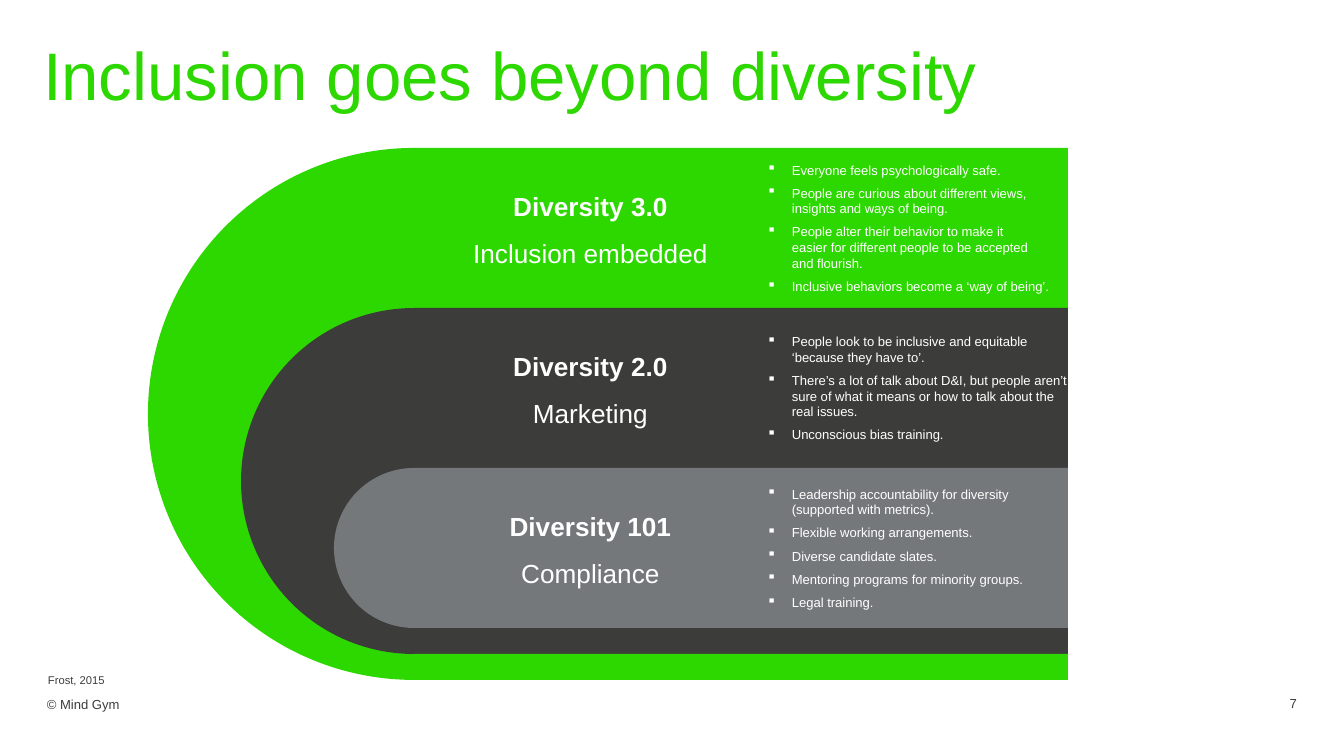
"""Build the slide on the three stages from diversity to inclusion."""
import pptx
import pptx.dml.color
import pptx.enum.shapes
import pptx.enum.text
import pptx.oxml.ns
import pptx.util
from lxml import etree

GREEN = pptx.dml.color.RGBColor(0x2D, 0xD7, 0x00)
CHARCOAL = pptx.dml.color.RGBColor(0x3C, 0x3C, 0x3B)
GREY = pptx.dml.color.RGBColor(0x75, 0x78, 0x7B)
WHITE = pptx.dml.color.RGBColor(0xFF, 0xFF, 0xFF)

Shape = pptx.enum.shapes.MSO_SHAPE
Align = pptx.enum.text.PP_ALIGN
Anchor = pptx.enum.text.MSO_ANCHOR

SLIDE_WIDTH, SLIDE_HEIGHT = 1344, 756
EMU_PER_PX = 9144000 / SLIDE_WIDTH

AXIS_X, TOP = 414, 148
COLUMN, ROW = 327, 160
OUTER_DIAMETER, DIAMETER_STEP = 532, 186
INSET, INDENT = 26, 25

STAGES = [
    (GREEN, "Diversity 3.0", "Inclusion embedded", [
        "Everyone feels psychologically safe.",
        "People are curious about different views, insights and ways of being.",
        "People alter their behavior to make it \neasier for different people "
        "to be accepted \nand flourish.",
        "Inclusive behaviors become a ‘way of being’.",
    ]),
    (CHARCOAL, "Diversity 2.0", "Marketing", [
        "People look to be inclusive and equitable ‘because they have to’.",
        "There’s a lot of talk about D&I, but people aren’t sure of what it means "
        "or how to talk about the real issues.",
        "Unconscious bias training.",
    ]),
    (GREY, "Diversity 101", "Compliance", [
        "Leadership accountability for diversity (supported with metrics).",
        "Flexible working arrangements.",
        "Diverse candidate slates.",
        "Mentoring programs for minority groups.",
        "Legal training.",
    ]),
]


def px(*lengths):
    return [pptx.util.Emu(round(length * EMU_PER_PX)) for length in lengths]


def add_bullet(paragraph):
    paragraph.level = 1
    properties = paragraph._p.get_or_add_pPr()
    margin, = px(INDENT)
    properties.set("marL", str(margin))
    properties.set("indent", str(-margin))
    bullet = etree.SubElement(properties, pptx.oxml.ns.qn("a:buChar"))
    bullet.set("char", "▪")


def write(holder, lines, size, color, align=Align.LEFT, anchor=Anchor.TOP, insets=(0, 0),
          spacing=None, after=0, bullets=False, bold_first=False):
    frame = holder.text_frame
    frame.word_wrap = True
    frame.auto_size = pptx.enum.text.MSO_AUTO_SIZE.NONE
    frame.vertical_anchor = anchor
    frame.margin_left, frame.margin_top = px(*insets)
    frame.margin_right = frame.margin_bottom = 0
    for index, line in enumerate(lines):
        paragraph = frame.paragraphs[0] if index == 0 else frame.add_paragraph()
        paragraph.text = line
        if bullets:
            add_bullet(paragraph)
        paragraph.alignment = align
        paragraph.line_spacing = spacing
        paragraph.space_after = pptx.util.Pt(after)
        for run in paragraph.runs:
            run.font.name = "Arial"
            run.font.size = pptx.util.Pt(size)
            run.font.color.rgb = color
            run.font.bold = bold_first and index == 0


def add_block(slide, kind, box, color):
    block = slide.shapes.add_shape(kind, *px(*box))
    block.shadow.inherit = False
    block.fill.solid()
    block.fill.fore_color.rgb = color
    block.line.fill.background()
    return block


def add_half_disc(slide, top, diameter, color):
    box = (AXIS_X - diameter // 2, top, diameter, diameter)
    disc = add_block(slide, Shape.PIE, box, color)
    disc.adjustments[0] = 54
    disc.adjustments[1] = 162


def add_stage(slide, top, color, name, focus, points):
    heading = add_block(slide, Shape.RECTANGLE, (AXIS_X, top, COLUMN, ROW), color)
    write(heading, [name, focus], 14, WHITE, align=Align.CENTER, anchor=Anchor.MIDDLE,
          insets=(INSET, 0), spacing=1.1, after=6.4, bold_first=True)
    details = add_block(slide, Shape.RECTANGLE, (AXIS_X + COLUMN, top, COLUMN, ROW), color)
    write(details, points, 7, WHITE, anchor=Anchor.MIDDLE, insets=(INSET, 0),
          after=4, bullets=True)


def add_note(slide, box, text, size, **text_format):
    note = slide.shapes.add_textbox(*px(*box))
    write(note, [text], size, CHARCOAL, **text_format)


def main():
    deck = pptx.Presentation()
    deck.slide_width, deck.slide_height = px(SLIDE_WIDTH, SLIDE_HEIGHT)
    slide = deck.slides.add_slide(deck.slide_layouts[5])

    title = slide.shapes.title
    title.left, title.top, title.width, title.height = px(43, 47, 1079, 77)
    write(title, ["Inclusion goes beyond diversity"], 36, GREEN, spacing=pptx.util.Pt(36))
    add_note(slide, (1259, 695, 38, 16), "7", 7, align=Align.RIGHT)
    add_note(slide, (47, 695, 426, 26), "© Mind Gym", 7, spacing=pptx.util.Pt(9))

    add_block(slide, Shape.RECTANGLE, (AXIS_X, 621, 2 * COLUMN, 38), CHARCOAL)
    for index, (color, *_) in enumerate(STAGES):
        add_half_disc(slide, TOP + index * ROW, OUTER_DIAMETER - index * DIAMETER_STEP, color)
    for index, stage in enumerate(STAGES):
        add_stage(slide, TOP + index * ROW, *stage)
    add_block(slide, Shape.RECTANGLE, (AXIS_X, 654, 2 * COLUMN, 26), GREEN)

    add_note(slide, (38, 668, 998, 24), "Frost, 2015", 6, insets=(10, 5))
    deck.save("out.pptx")


if __name__ == "__main__":
    main()
